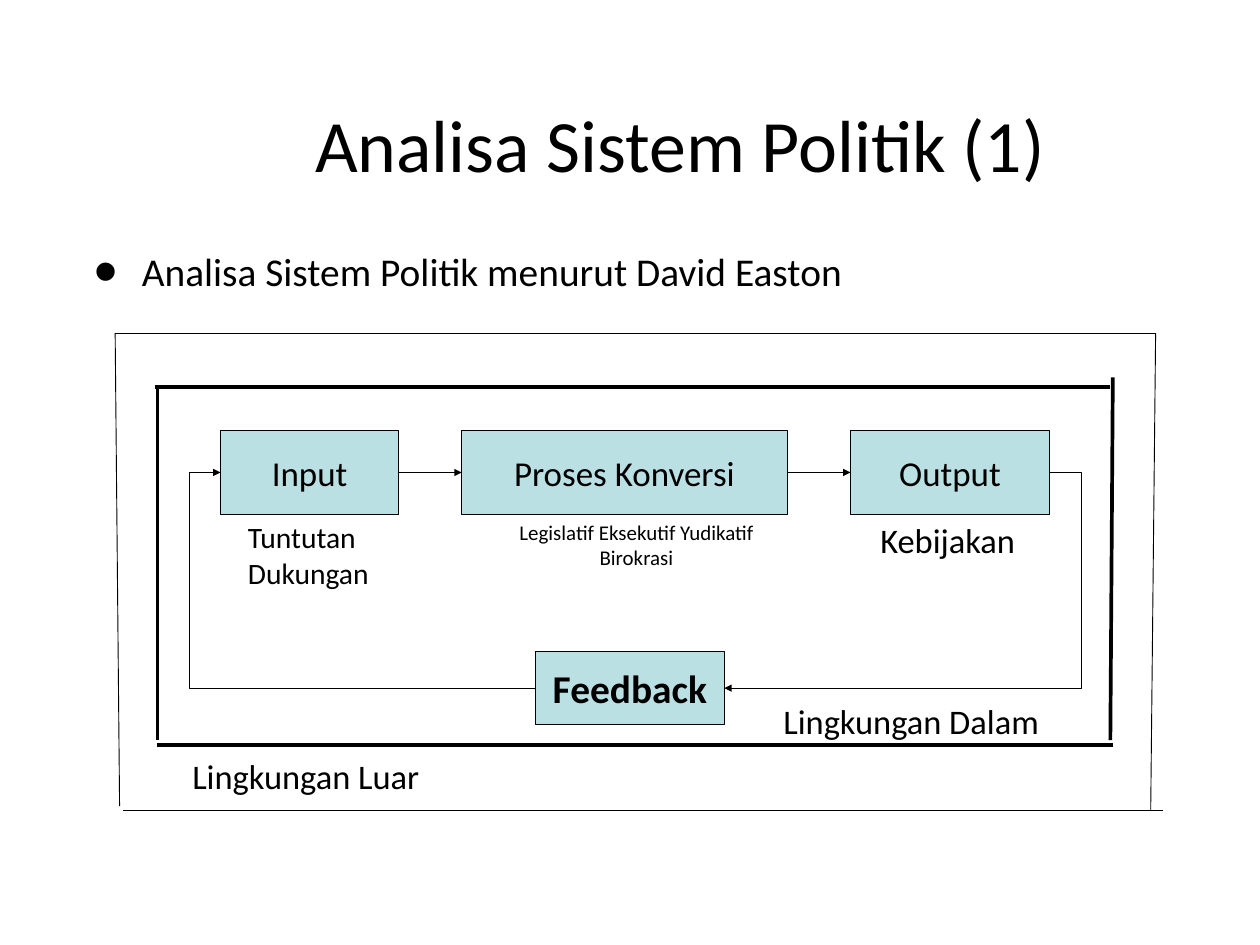
from dataclasses import dataclass
from lxml.etree import SubElement
from pptx import Presentation
from pptx.dml.color import RGBColor
from pptx.enum.shapes import MSO_CONNECTOR, MSO_SHAPE
from pptx.enum.text import MSO_ANCHOR, MSO_AUTO_SIZE, PP_ALIGN
from pptx.oxml.ns import qn
from pptx.util import Inches, Pt


@dataclass(frozen=True)
class Theme:
    font: str = "Calibri"
    ink: RGBColor = RGBColor(0x00, 0x00, 0x00)
    fill: RGBColor = RGBColor(0xBB, 0xE0, 0xE3)
    title: float = 60
    heading: float = 32
    stage: float = 28.4
    label: float = 28
    detail: float = 24
    small: float = 17
    thin: float = 0.75
    thick: float = 3


theme = Theme()
deck = Presentation()
deck.slide_width, deck.slide_height = Inches(14.22), Inches(10.67)
column, row = deck.slide_width / 128, deck.slide_height / 96
page = deck.slides.add_slide(deck.slide_layouts[1])


def write(frame, lines, size, align, bold=False):
    frame.word_wrap = True
    frame.auto_size = MSO_AUTO_SIZE.NONE
    for index, line in enumerate(lines):
        para = frame.add_paragraph() if index else frame.paragraphs[0]
        para.alignment = align
        para.space_before = Pt(0)
        span = para.add_run()
        span.text = line
        span.font.name = theme.font
        span.font.size = Pt(size)
        span.font.bold = bold
        span.font.color.rgb = theme.ink


def connect(start, end, width, arrow=False, bend=None):
    kind = MSO_CONNECTOR.STRAIGHT if bend is None else MSO_CONNECTOR.ELBOW
    line = page.shapes.add_connector(
        kind, int(start[0] * column), int(start[1] * row), int(end[0] * column), int(end[1] * row)
    )
    line.line.color.rgb = theme.ink
    line.line.width = Pt(width)
    properties = line._element.spPr
    if arrow:
        SubElement(properties.find(qn("a:ln")), qn("a:tailEnd"), type="triangle")
    if bend is not None:
        share = (bend - start[0]) / (end[0] - start[0])
        guides = properties.find(qn("a:prstGeom")).get_or_add_avLst()
        SubElement(guides, qn("a:gd"), name="adj1", fmla=f"val {round(share * 100000)}")
    SubElement(properties, qn("a:effectLst"))


title, body = page.shapes.title, page.placeholders[1]
for box, (left, top, width, height) in (
    (title, (12.5, 2.5, 103, 24)),
    (body, (6.4, 24.6, 115.2, 7.5)),
):
    box.left, box.top = int(left * column), int(top * row)
    box.width, box.height = int(width * column), int(height * row)
    frame = box.text_frame
    frame.margin_left = frame.margin_right = frame.margin_top = frame.margin_bottom = Inches(0.06)

title.text_frame.margin_left = Inches(1.19)
title.text_frame.vertical_anchor = MSO_ANCHOR.MIDDLE
write(title.text_frame, ["Analisa Sistem Politik (1)"], theme.title, PP_ALIGN.CENTER)

body.text_frame.vertical_anchor = MSO_ANCHOR.TOP
bullet = body.text_frame.paragraphs[0]._p.get_or_add_pPr()
bullet.set("marL", str(Inches(0.83)))
bullet.set("indent", str(Inches(-0.54)))
SubElement(bullet, qn("a:buSzPct"), val="171000")
SubElement(bullet, qn("a:buChar"), char="•")
write(body.text_frame, ["Analisa Sistem Politik menurut David Easton"], theme.heading, PP_ALIGN.LEFT)

stage_top, stage_height, stage_middle = 43.75, 8.5, 48
feedback_middle = 69.9
stages = (
    ("Input", 22.4, stage_top, 18.1, stage_height, theme.stage, False),
    ("Proses Konversi", 46.9, stage_top, 33.1, stage_height, theme.stage, False),
    ("Output", 86.4, stage_top, 20.25, stage_height, theme.stage, False),
    ("Feedback", 54.4, 66.15, 19.2, 7.5, theme.heading, True),
)
for name, left, top, width, height, size, bold in stages:
    box = page.shapes.add_shape(
        MSO_SHAPE.RECTANGLE, int(left * column), int(top * row), int(width * column), int(height * row)
    )
    box.shadow.inherit = False
    box.fill.solid()
    box.fill.fore_color.rgb = theme.fill
    box.line.color.rgb = theme.ink
    box.line.width = Pt(theme.thin)
    box.text_frame.vertical_anchor = MSO_ANCHOR.MIDDLE
    write(box.text_frame, [name], size, PP_ALIGN.CENTER, bold)

for start, end in ((40.5, 46.9), (80, 86.4)):
    connect((start, stage_middle), (end, stage_middle), theme.thin, arrow=True)
connect((106.65, stage_middle), (73.6, feedback_middle), theme.thin, arrow=True, bend=109.9)
connect((54.4, feedback_middle), (22.4, stage_middle), theme.thin, arrow=True, bend=19.2)

inner_frame = (
    ((16, 39.3), (16, 75.2)),
    ((15.7, 39.3), (112.8, 39.3)),
    ((113.05, 38.35), (112.8, 75.2)),
    ((16, 75.7), (113.05, 75.7)),
)
outer_frame = (
    ((11.7, 33.85), (12.15, 81.9)),
    ((11.7, 33.85), (117.4, 33.85)),
    ((117.4, 33.85), (116.9, 82.35)),
    ((12.5, 82.35), (118.1, 82.35)),
)
for edges, weight in ((inner_frame, theme.thick), (outer_frame, theme.thin)):
    for start, end in edges:
        connect(start, end, weight)

label_top = 52.3
labels = (
    (["Lingkungan Dalam"], 78.7, 70.65, 31.4, 5.1, theme.label, PP_ALIGN.LEFT),
    (["Lingkungan Luar"], 18.65, 76.25, 28.3, 5.1, theme.label, PP_ALIGN.LEFT),
    (["Tuntutan", "Dukungan"], 24.3, label_top, 15.7, 8.2, theme.detail, PP_ALIGN.LEFT),
    (["Kebijakan"], 88.55, label_top, 17.4, 5.1, theme.label, PP_ALIGN.LEFT),
    (["Legislatif Eksekutif Yudikatif", "Birokrasi"], 50.15, label_top, 29, 6, theme.small, PP_ALIGN.CENTER),
)
for lines, left, top, width, height, size, align in labels:
    box = page.shapes.add_textbox(int(left * column), int(top * row), int(width * column), int(height * row))
    write(box.text_frame, lines, size, align)

deck.save("out.pptx")
